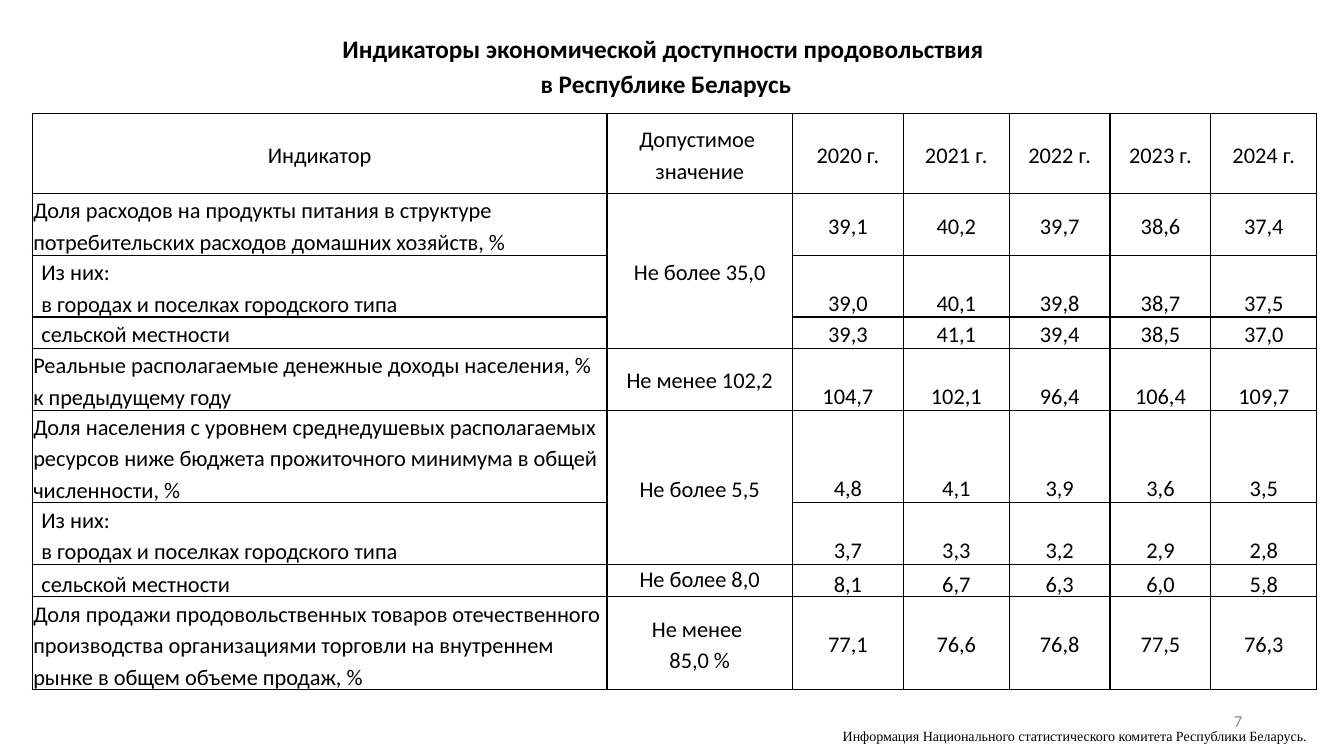
"""Build the slide on food affordability indicators in Belarus."""
import dataclasses

import lxml.etree
import pptx
import pptx.dml.color
import pptx.enum.text
import pptx.oxml.ns
import pptx.slide
import pptx.table
import pptx.text.text
import pptx.util

Inches = pptx.util.Inches
Align = pptx.enum.text.PP_ALIGN
Anchor = pptx.enum.text.MSO_ANCHOR
Fit = pptx.enum.text.MSO_AUTO_SIZE


@dataclasses.dataclass(frozen=True)
class Theme:
    sans: str = "Calibri"
    serif: str = "Times New Roman"
    ink: str = "000000"
    gray: str = "8C8C8C"
    head: int = 18
    cell: int = 16
    page: int = 12
    note: int = 10
    rule: float = 1
    lead: float = 1.15
    tight: float = 0.8


THEME = Theme()


@dataclasses.dataclass(frozen=True)
class Row:
    height: float
    label: str
    limit: str
    values: str
    anchor: Anchor = Anchor.BOTTOM
    indent: float = 0
    lead: float = THEME.lead
    span: int = 1


@dataclasses.dataclass(frozen=True)
class Label:
    text: str
    box: tuple[float, float, float, float]
    align: Align
    font: str
    size: int
    color: str
    indent: float = 0
    wrap: bool = True
    fit: Fit = Fit.NONE


TITLE = "Индикаторы экономической доступности продовольствия \nв Республике Беларусь"
TOWNS = "Из них:\nв городах и поселках городского типа"
RURAL = "сельской местности"
WIDTHS = (5.7, 1.84, 1.1, 1.05, 1, 1, 1.05)
YEARS = "|".join(f"{year} г." for year in range(2020, 2025))
ROWS = (
    Row(0.79, "Индикатор", "Допустимое \nзначение", YEARS, Anchor.MIDDLE),
    Row(0.61, "Доля расходов на продукты питания в структуре потребительских "
        "расходов домашних хозяйств, %", "Не более 35,0",
        "39,1|40,2|39,7|38,6|37,4", Anchor.MIDDLE, span=3),
    Row(0.61, TOWNS, "", "39,0|40,1|39,8|38,7|37,5", indent=0.08),
    Row(0.31, RURAL, "", "39,3|41,1|39,4|38,5|37,0", Anchor.MIDDLE, 0.08),
    Row(0.61, "Реальные располагаемые денежные доходы населения, % "
        "к предыдущему году", "Не менее 102,2", "104,7|102,1|96,4|106,4|109,7"),
    Row(0.92, "Доля населения с уровнем среднедушевых располагаемых ресурсов "
        "ниже бюджета прожиточного минимума в общей численности, %",
        "Не более 5,5", "4,8|4,1|3,9|3,6|3,5", span=2),
    Row(0.61, TOWNS, "", "3,7|3,3|3,2|2,9|2,8", indent=0.08),
    Row(0.32, RURAL, "Не более 8,0", "8,1|6,7|6,3|6,0|5,8", indent=0.08,
        lead=THEME.tight),
    Row(0.92, "Доля продажи продовольственных товаров отечественного "
        "производства организациями торговли на внутреннем рынке в общем "
        "объеме продаж, %", "Не менее \n85,0 %",
        "77,1|76,6|76,8|77,5|76,3", Anchor.MIDDLE),
)
LABELS = (
    Label("7", (9.42, 6.95, 3, 0.4), Align.RIGHT, THEME.sans, THEME.page, THEME.gray),
    Label("Информация Национального статистического комитета Республики Беларусь.",
          (8.06, 7.17, 5.11, 0.27), Align.JUSTIFY, THEME.serif, THEME.note,
          THEME.ink, 0.2, False, Fit.SHAPE_TO_FIT_TEXT),
)


def style(line: pptx.text.text._Paragraph, font: str, size: int, color: str,
          align: Align, lead: float = 1, bold: bool = False) -> None:
    """Set the look of one paragraph."""
    line.alignment = align
    line.line_spacing = lead
    line.font.name = font
    line.font.size = pptx.util.Pt(size)
    line.font.bold = bold
    line.font.color.rgb = pptx.dml.color.RGBColor.from_string(color)


def border(cell: pptx.table._Cell) -> None:
    """Rule all four sides of a cell."""
    props = cell._tc.get_or_add_tcPr()
    name = pptx.oxml.ns.qn
    for side in ("lnL", "lnR", "lnT", "lnB"):
        edge = lxml.etree.SubElement(props, name(f"a:{side}"),
                                     w=str(pptx.util.Pt(THEME.rule)))
        fill = lxml.etree.SubElement(edge, name("a:solidFill"))
        lxml.etree.SubElement(fill, name("a:srgbClr"), val=THEME.ink)


def write(cell: pptx.table._Cell, text: str, anchor: Anchor, align: Align,
          lead: float, indent: float = 0) -> None:
    """Fill one table cell with text."""
    border(cell)
    cell.fill.background()
    cell.margin_left = cell.margin_right = Inches(0.01)
    cell.margin_top = cell.margin_bottom = 0
    cell.vertical_anchor = anchor
    cell.text = text
    for line in cell.text_frame.paragraphs:
        if indent:
            line._p.get_or_add_pPr().set("marL", str(Inches(indent)))
        style(line, THEME.sans, THEME.cell, THEME.ink, align, lead)


def draw_table(slide: pptx.slide.Slide) -> None:
    """Draw the table of indicators."""
    frame = slide.shapes.add_table(
        len(ROWS), len(WIDTHS), Inches(0.32), Inches(1.13),
        Inches(sum(WIDTHS)), Inches(sum(row.height for row in ROWS)))
    table = frame.table
    table.first_row = table.horz_banding = False
    for col, width in zip(table.columns, WIDTHS):
        col.width = Inches(width)
    for at, row in enumerate(ROWS):
        table.rows[at].height = Inches(row.height)
        first = at == 0
        write(table.cell(at, 0), row.label, Anchor.MIDDLE if first else Anchor.BOTTOM,
              Align.CENTER if first else Align.LEFT, row.lead, row.indent)
        write(table.cell(at, 1), row.limit, Anchor.MIDDLE, Align.CENTER, row.lead)
        for col, value in enumerate(row.values.split("|"), 2):
            write(table.cell(at, col), value, row.anchor, Align.CENTER, row.lead)
    for at, row in enumerate(ROWS):
        if row.span > 1:
            table.cell(at, 1).merge(table.cell(at + row.span - 1, 1))


def draw_title(slide: pptx.slide.Slide) -> None:
    """Place and fill the title."""
    title = slide.shapes.title
    title.left, title.top = Inches(2.09), Inches(0.24)
    title.width, title.height = Inches(9.03), Inches(0.78)
    frame = title.text_frame
    frame.text = TITLE
    frame.word_wrap = True
    frame.auto_size = Fit.SHAPE_TO_FIT_TEXT
    frame.vertical_anchor = Anchor.TOP
    for line in frame.paragraphs:
        style(line, THEME.sans, THEME.head, THEME.ink, Align.CENTER, THEME.lead, True)


def draw_label(slide: pptx.slide.Slide, label: Label) -> None:
    """Draw one small line of text."""
    frame = slide.shapes.add_textbox(*map(Inches, label.box)).text_frame
    frame.text = label.text
    frame.word_wrap = label.wrap
    frame.auto_size = label.fit
    frame.vertical_anchor = Anchor.MIDDLE
    line = frame.paragraphs[0]
    if label.indent:
        line._p.get_or_add_pPr().set("indent", str(Inches(label.indent)))
    style(line, label.font, label.size, label.color, label.align)


def main() -> None:
    """Build and save the deck."""
    deck = pptx.Presentation()
    deck.slide_width, deck.slide_height = Inches(13.33), Inches(7.5)
    slide = deck.slides.add_slide(deck.slide_layouts.get_by_name("Title Only"))
    draw_title(slide)
    draw_table(slide)
    for label in LABELS:
        draw_label(slide, label)
    deck.save("out.pptx")


if __name__ == "__main__":
    main()
